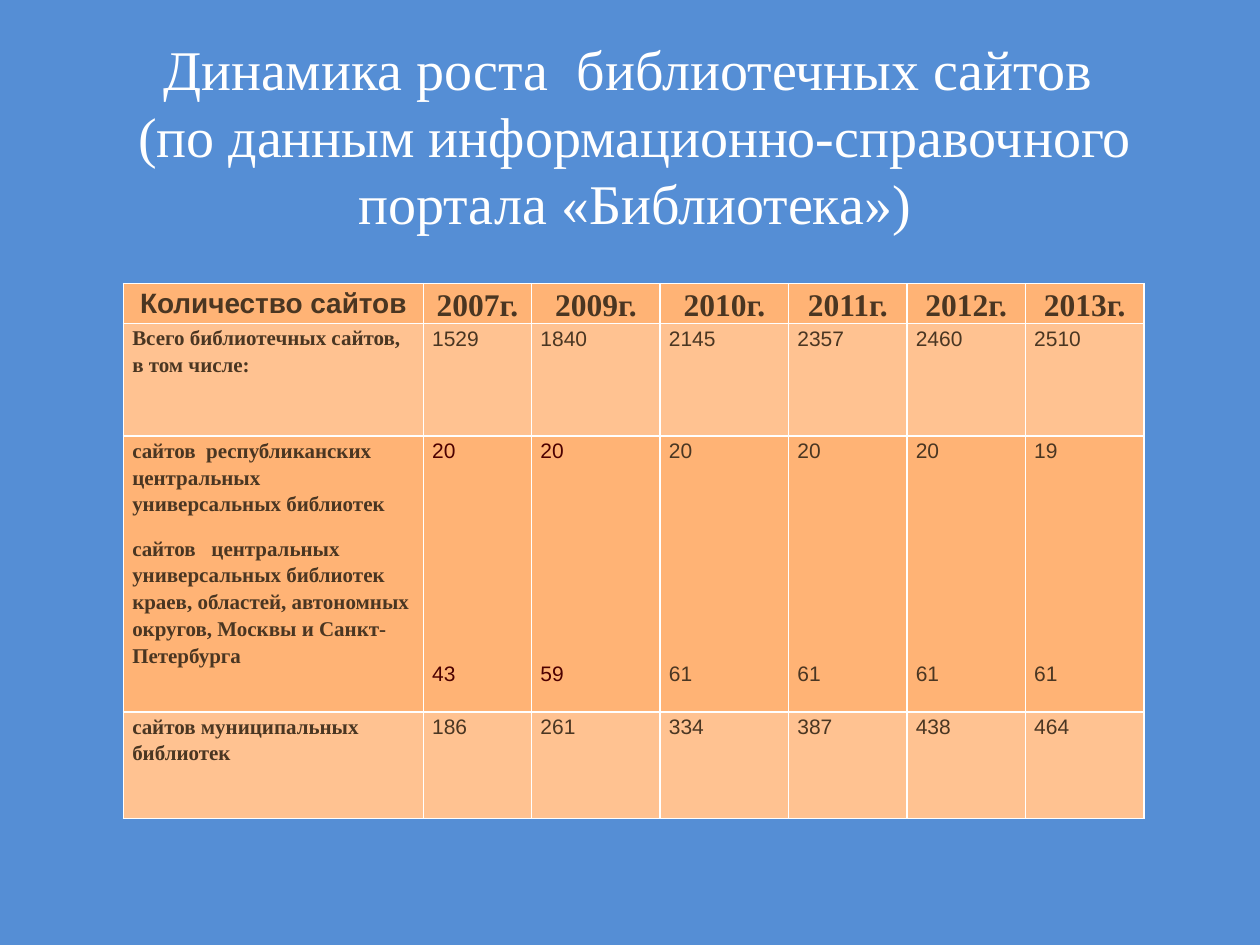
from dataclasses import dataclass

from lxml import etree
from pptx import Presentation, util as u
from pptx.dml.color import RGBColor
from pptx.enum import text
from pptx.oxml import ns


@dataclass(frozen=True)
class Theme:
    page: str = "558ED5"
    white: str = "FFFFFF"
    ink: str = "4A3622"
    accent: str = "4C0000"
    dark_row: str = "FFB375"
    light_row: str = "FFC291"
    serif: str = "Times New Roman"
    sans: str = "Arial"
    title_size: float = 32
    label_size: float = 16
    year_size: float = 18
    body_size: float = 12


class SlideBuilder:
    def __init__(self, deck, theme):
        self.deck, self.theme = deck, theme
        self.page = deck.slides.add_slide(deck.slide_layouts[5])
        fill = self.page.background.fill
        fill.solid()
        fill.fore_color.rgb = RGBColor.from_string(theme.page)

    def across(self, share):
        return u.Emu(round(self.deck.slide_width * share))

    def down(self, share):
        return u.Emu(round(self.deck.slide_height * share))

    def format_para(self, para, font, size, color, bold=False, align=None):
        para.alignment = align
        for span in para.runs:
            span.font.name, span.font.size, span.font.bold = font, u.Pt(size), bold
            span.font.color.rgb = RGBColor.from_string(color)

    def title(self, lines, left, top, width, height):
        box = self.page.shapes.title
        box.left, box.top = self.across(left), self.down(top)
        box.width, box.height = self.across(width), self.down(height)
        frame = box.text_frame
        frame.text = "\n".join(lines)
        frame.word_wrap = True
        frame.auto_size = text.MSO_AUTO_SIZE.NONE
        frame.vertical_anchor = text.MSO_ANCHOR.MIDDLE
        for para in frame.paragraphs:
            self.format_para(para, self.theme.serif, self.theme.title_size,
                             self.theme.white, align=text.PP_ALIGN.CENTER)

    def table(self, left, top, columns, rows):
        frame = self.page.shapes.add_table(
            len(rows), len(columns), self.across(left), self.down(top),
            self.across(sum(columns)), self.down(sum(rows)))
        table = frame.table
        for column, width in zip(table.columns, columns):
            column.width = self.across(width)
        for row, height in zip(table.rows, rows):
            row.height = self.down(height)
        return table

    def borders(self, cell, points=1):
        properties = cell._tc.get_or_add_tcPr()
        for side in ("a:lnL", "a:lnR", "a:lnT", "a:lnB"):
            line = etree.SubElement(properties, ns.qn(side), w=str(u.Pt(points)))
            fill = etree.SubElement(line, ns.qn("a:solidFill"))
            etree.SubElement(fill, ns.qn("a:srgbClr"), val=self.theme.white)

    def cell(self, cell, content, fill, gap=0, **style):
        cell.margin_left = cell.margin_right = u.Inches(0.07)
        cell.margin_top = cell.margin_bottom = 0
        self.borders(cell)
        cell.fill.solid()
        cell.fill.fore_color.rgb = RGBColor.from_string(fill)
        cell.text_frame.text = content
        for index, para in enumerate(cell.text_frame.paragraphs):
            para.line_spacing, para.space_after = 1.15, u.Pt(10)
            para.space_before = u.Pt(gap if index else 0)
            self.format_para(para, **style)


TITLE = ["Динамика роста  библиотечных сайтов ",
         "(по данным информационно-справочного портала «Библиотека»)"]
HEADER = ["Количество сайтов"] + [
    f"{year}г." for year in (2007, 2009, 2010, 2011, 2012, 2013)]
# A line break separates the paragraphs of a cell
BODY = [
    ["Всего библиотечных сайтов, в том числе:",
     "1529", "1840", "2145", "2357", "2460", "2510"],
    ["сайтов  республиканских центральных универсальных библиотек\n"
     "сайтов   центральных универсальных библиотек  краев, областей, "
     "автономных округов, Москвы и Санкт-Петербурга",
     "20\n43", "20\n59", "20\n61", "20\n61", "20\n61", "19\n61"],
    ["сайтов муниципальных библиотек",
     "186", "261", "334", "387", "438", "464"],
]
COLUMNS = [0.238, 0.086, 0.102, 0.102, 0.094, 0.094, 0.094]
ROWS = [0.042, 0.119, 0.292, 0.113]
SECOND_VALUE_GAP = 102


def main():
    deck = Presentation()
    deck.slide_width, deck.slide_height = u.Inches(10), u.Inches(7.5)
    theme = Theme()
    builder = SlideBuilder(deck, theme)

    # Title
    builder.title(TITLE, 0.033, 0.028, 0.942, 0.23)

    # Table header
    table = builder.table(0.098, 0.3, COLUMNS, ROWS)
    for column, label in enumerate(HEADER):
        builder.cell(table.cell(0, column), label, theme.dark_row,
                     font=theme.serif if column else theme.sans,
                     size=theme.year_size if column else theme.label_size,
                     color=theme.ink, bold=True, align=text.PP_ALIGN.CENTER)

    # Table body: bold row labels, plain values, alternating fills
    for row, contents in enumerate(BODY, start=1):
        fill = theme.light_row if row % 2 else theme.dark_row
        for column, content in enumerate(contents):
            accented = row == 2 and column in (1, 2)
            builder.cell(table.cell(row, column), content, fill,
                         gap=SECOND_VALUE_GAP if column else 0,
                         font=theme.sans if column else theme.serif,
                         size=theme.body_size,
                         color=theme.accent if accented else theme.ink,
                         bold=column == 0)

    deck.save("out.pptx")


if __name__ == "__main__":
    main()
